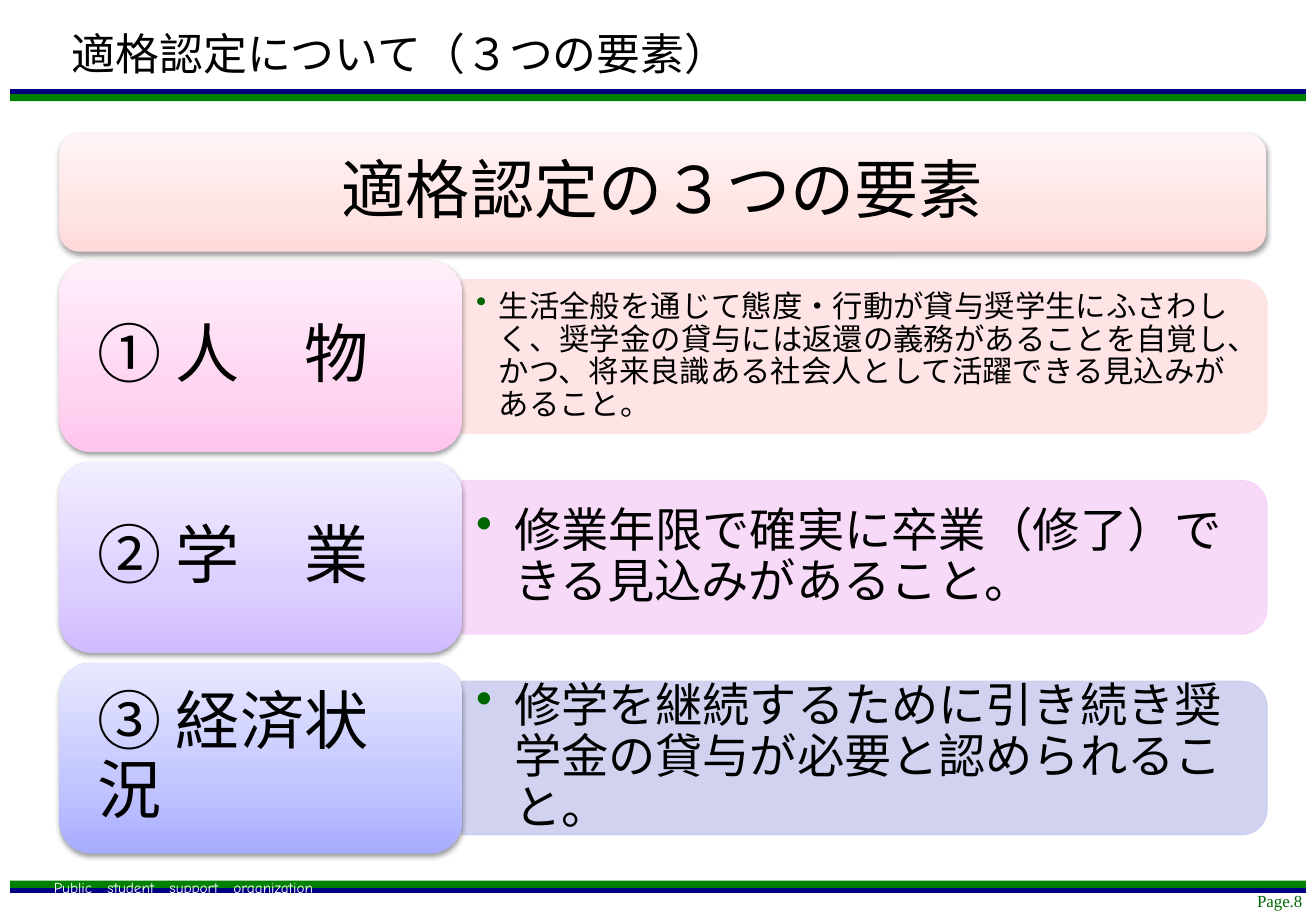
import pptx
import pptx.dml.color
import pptx.enum.shapes
import pptx.enum.text
import pptx.oxml
import pptx.oxml.ns
import pptx.util
from lxml import etree

Pt = pptx.util.Pt
RGB = pptx.dml.color.RGBColor
SHAPES = pptx.enum.shapes.MSO_SHAPE
ANCHOR = pptx.enum.text.MSO_ANCHOR
ALIGN = pptx.enum.text.PP_ALIGN
qn = pptx.oxml.ns.qn

COLORS = {
    "text": "000000", "white": "FFFFFF", "navy": "000080",
    "green": "008000", "accent": "006600",
}
GOTHIC = "Noto Sans CJK JP"
LEFT, LABEL_WIDTH, FIRST_ROW, ROW_PITCH, ROW_HEIGHT = 35.3, 238.5, 154.8, 119, 113.2
PANEL_WIDTH, PANEL_HEIGHT = 477.2, 91

# Gradient runs from the bottom colour to the top colour
HEADING_GRADIENT = ("FFD9DA", "FFE4E4", "FFF4F5")
ELEMENTS = [
    ("① 人　物", ("FFC5ED", "FFD6F2", "FFEFFA"), "FEE2E3", 18, 13.5,
     "生活全般を通じて態度・行動が貸与奨学生にふさわしく、奨学金の貸与には返還の義務があることを自覚し、"
     "かつ、将来良識ある社会人として活躍できる見込みがあること。"),
    ("② 学　業", ("D0BBFF", "DDCFFF", "F2EDFF"), "F7D5F8", 28, 22.5,
     "修業年限で確実に卒業（修了）できる見込みがあること。"),
    ("③ 経済状況", ("A8ACFF", "C1C4FF", "E8E9FF"), "CBCEEE", 28, 22.5,
     "修学を継続するために引き続き奨学金の貸与が必要と認められること。"),
]


def points(*values):
    return [Pt(value) for value in values]


def apply(target, **values):
    for name, value in values.items():
        setattr(target, name, value)


def write(frame, text, size, color="text", font=GOTHIC, align=ALIGN.LEFT, spacing=0.9,
          insets=(7.2, 3.6, 7.2, 3.6), anchor=ANCHOR.TOP, wrap=True, hanging=None):
    sides = ("margin_left", "margin_top", "margin_right", "margin_bottom")
    apply(frame, word_wrap=wrap, vertical_anchor=anchor, **dict(zip(sides, points(*insets))))
    paragraph = frame.paragraphs[0]
    apply(paragraph, alignment=align, line_spacing=spacing)
    if hanging:
        add_bullet(paragraph, hanging)
    run = paragraph.add_run()
    run.text = text
    apply(run.font, size=Pt(size), name=font)
    run.font.color.rgb = RGB.from_string(COLORS[color])
    etree.SubElement(run.font._element, qn("a:ea"), typeface=font)


def add_bullet(paragraph, hanging):
    properties = paragraph._p.get_or_add_pPr()
    properties.set("marL", str(Pt(hanging)))
    properties.set("indent", str(-Pt(hanging)))
    bullet_color = etree.SubElement(properties, qn("a:buClr"))
    etree.SubElement(bullet_color, qn("a:srgbClr"), val=COLORS["accent"])
    etree.SubElement(properties, qn("a:buChar"), char="•")


def add_text(slide, box, text, size, **format_values):
    write(slide.shapes.add_textbox(*points(*box)).text_frame, text, size, **format_values)


def add_band(slide, top, line_y):
    band = slide.shapes.add_shape(SHAPES.RECTANGLE, *points(6, top, 768, 6))
    band.shadow.inherit = False
    band.fill.solid()
    band.fill.fore_color.rgb = RGB.from_string(COLORS["green"])
    band.line.fill.background()
    stripe = slide.shapes.add_connector(
        pptx.enum.shapes.MSO_CONNECTOR.STRAIGHT, *points(6, line_y, 774, line_y))
    stripe.line.width = Pt(3)
    stripe.line.color.rgb = RGB.from_string(COLORS["navy"])
    etree.SubElement(stripe._element.spPr, qn("a:effectLst"))


def add_card(slide, box, gradient, text, align=ALIGN.LEFT):
    card = slide.shapes.add_shape(SHAPES.ROUNDED_RECTANGLE, *points(*box))
    card.line.fill.background()
    card.shadow.inherit = False
    properties = card._element.spPr
    # Three-stop vertical gradient
    stops = "".join(f'<a:gs pos="{position}"><a:srgbClr val="{color}"/></a:gs>'
                    for position, color in zip((0, 35000, 100000), gradient))
    properties.find(qn("a:prstGeom")).addnext(pptx.oxml.parse_xml(
        f'<a:gradFill {pptx.oxml.ns.nsdecls("a")} rotWithShape="1"><a:gsLst>{stops}</a:gsLst>'
        '<a:lin ang="16200000" scaled="0"/></a:gradFill>'))
    # Soft shadow below
    shadow = etree.SubElement(properties.find(qn("a:effectLst")), qn("a:outerShdw"),
                              blurRad=str(Pt(3.1)), dist=str(Pt(1.6)), dir="5400000",
                              rotWithShape="0")
    shade = etree.SubElement(shadow, qn("a:srgbClr"), val=COLORS["text"])
    etree.SubElement(shade, qn("a:alpha"), val="38000")
    write(card.text_frame, text, 38, align=align, anchor=ANCHOR.MIDDLE,
          insets=(17, 9, 17, 9))


def add_panel(slide, left, middle, color):
    # A quarter turn puts the two rounded corners on the right
    panel = slide.shapes.add_shape(SHAPES.ROUND_2_SAME_RECTANGLE, *points(
        left + (PANEL_WIDTH - PANEL_HEIGHT) / 2, middle - PANEL_WIDTH / 2,
        PANEL_HEIGHT, PANEL_WIDTH))
    panel.rotation = 90
    panel.shadow.inherit = False
    panel.line.width = Pt(0.75)
    for fill in (panel.fill, panel.line.fill):
        fill.solid()
        fill.fore_color.rgb = RGB.from_string(color)
    for shade in panel._element.spPr.iter(qn("a:srgbClr")):
        etree.SubElement(shade, qn("a:alpha"), val="90000")


def main():
    deck = pptx.Presentation()
    apply(deck, slide_width=Pt(780), slide_height=Pt(540))
    slide = deck.slides.add_slide(deck.slide_layouts[6])

    # Footer and header bands
    add_text(slide, (714.2, 527.8, 64.8, 13), "Page.8", 10, color="accent",
             font="Times New Roman", align=ALIGN.RIGHT, spacing=1.0,
             insets=(7.2, 0, 7.2, 3.6))
    add_band(slide, 522, 528)
    add_text(slide, (12, 522, 180, 6), "Public　student　support　organization", 9,
             color="white", font="Comic Neue", align=ALIGN.RIGHT, spacing=1.0,
             insets=(6.5, 2.9, 6.5, 0.7), anchor=ANCHOR.MIDDLE, wrap=False)
    add_band(slide, 54, 54)

    # Title and heading
    add_text(slide, (35.3, 18, 525, 32.4), "適格認定について（３つの要素）", 26, spacing=0.8)
    add_card(slide, (LEFT, 79.2, 715, 70), HEADING_GRADIENT, "適格認定の３つの要素",
             align=ALIGN.CENTER)

    # The three elements
    for row, (label, gradient, panel_color, size, hanging, criterion) in enumerate(ELEMENTS):
        top = FIRST_ROW + row * ROW_PITCH
        middle = top + ROW_HEIGHT / 2
        panel_left = LEFT + LABEL_WIDTH
        add_panel(slide, panel_left, middle, panel_color)
        add_text(slide, (panel_left, middle - 41, 472.3, 82), criterion, size,
                 hanging=hanging, anchor=ANCHOR.MIDDLE, insets=(8.4, 4.2, 8.4, 4.2))
        add_card(slide, (LEFT, top, LABEL_WIDTH, ROW_HEIGHT), gradient, label)

    deck.save("out.pptx")


if __name__ == "__main__":
    main()
